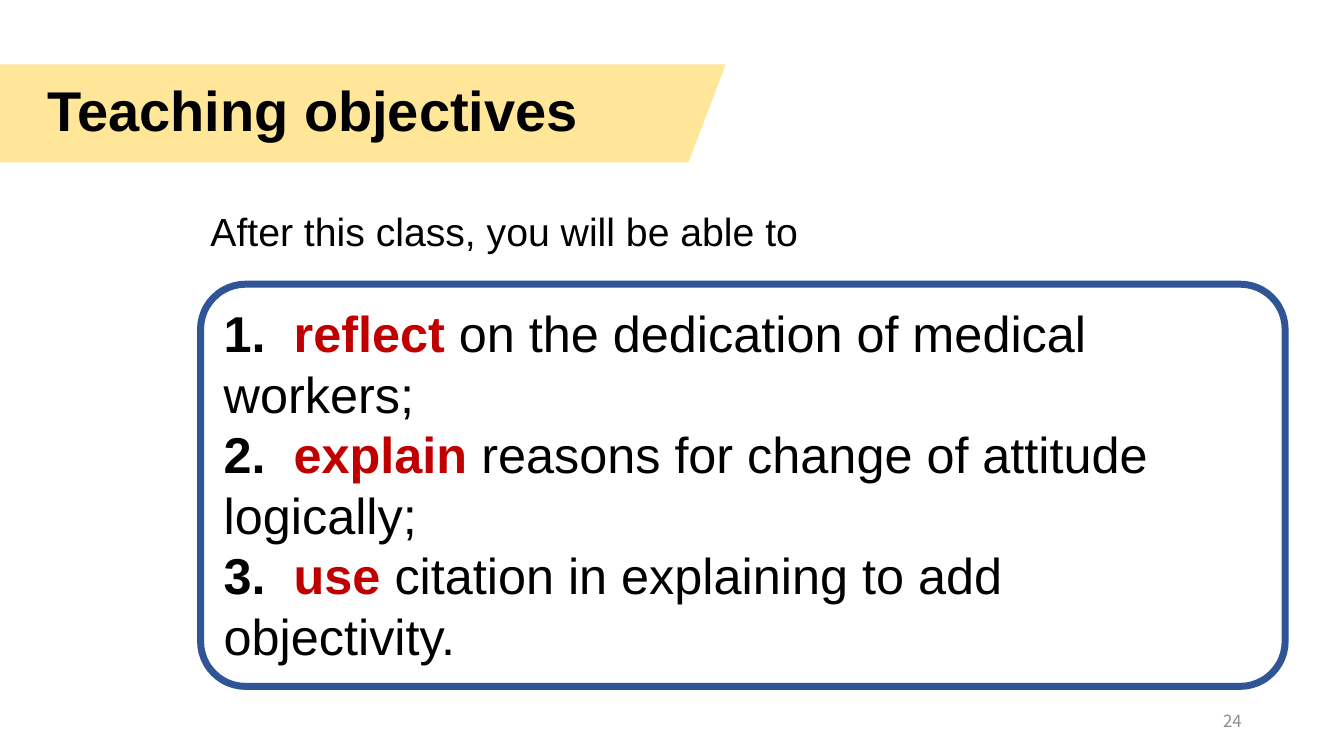
from lxml.etree import SubElement
from pptx import Presentation
from pptx.dml.color import RGBColor
from pptx.enum.shapes import MSO_SHAPE as Shape
from pptx.enum.text import MSO_ANCHOR as Anchor, PP_ALIGN as Align
from pptx.oxml.ns import qn
from pptx.util import Pt

COLORS = {"ink": "000000", "verb": "C00000", "banner": "FFE699",
          "frame": "2F5597", "paper": "FFFFFF", "number": "8C8C8C"}

OBJECTIVES = [
    ("reflect", "on the dedication of medical workers;"),
    ("explain", "reasons for change of attitude logically;"),
    ("use", "citation in explaining to add objectivity."),
]


def rgb(name):
    return RGBColor.from_string(COLORS[name])


def add_run(paragraph, text, size=36, color="ink", bold=False, font="Arial"):
    run = paragraph.add_run()
    run.text = text
    run.font.name = font
    run.font.size = Pt(size)
    run.font.bold = bold
    run.font.color.rgb = rgb(color)
    # East Asian typeface follows the Latin one
    SubElement(run.font._element, qn("a:ea")).set("typeface", font)


def add_text(slide, box, text, anchor=Anchor.TOP, align=Align.LEFT,
             spacing=None, **style):
    frame = slide.shapes.add_textbox(*map(Pt, box)).text_frame
    frame.word_wrap = True
    frame.vertical_anchor = anchor
    paragraph = frame.paragraphs[0]
    paragraph.alignment = align
    paragraph.line_spacing = spacing
    add_run(paragraph, text, **style)


def add_tab_stop(paragraph, position):
    stops = SubElement(paragraph._p.get_or_add_pPr(), qn("a:tabLst"))
    stop = SubElement(stops, qn("a:tab"))
    stop.set("pos", str(Pt(position)))
    stop.set("algn", "l")


def add_banner(slide, left, top, width, height):
    # Band with a slanted right end
    slant = 26.6
    outline = slide.shapes.build_freeform(Pt(left), Pt(top))
    outline.add_line_segments([
        (Pt(left + width), Pt(top)),
        (Pt(left + width - slant), Pt(top + height)),
        (Pt(left), Pt(top + height)),
    ], close=True)
    band = outline.convert_to_shape()
    band.shadow.inherit = False
    band.fill.solid()
    band.fill.fore_color.rgb = rgb("banner")
    band.line.fill.background()

    # Heading
    add_text(slide, (left + 26.6, top, width - 65, height),
             "Teaching objectives", anchor=Anchor.MIDDLE, spacing=0.9,
             size=40, bold=True)


def add_objectives(slide, left, top, width, height):
    # Lead-in above the frame
    add_text(slide, (left, top, 556.6, 41),
             "After this class, you will be able to", size=28)

    # Rounded frame
    lead_in = 58.3
    panel = slide.shapes.add_shape(
        Shape.ROUNDED_RECTANGLE, Pt(left), Pt(top + lead_in),
        Pt(width), Pt(height - lead_in))
    panel.adjustments[0] = 0.112
    panel.shadow.inherit = False
    panel.fill.solid()
    panel.fill.fore_color.rgb = rgb("paper")
    panel.line.color.rgb = rgb("frame")
    panel.line.width = Pt(5)

    # Numbered objectives
    frame = panel.text_frame
    frame.word_wrap = True
    frame.vertical_anchor = Anchor.TOP
    frame.margin_right = Pt(30)
    for number, (verb, rest) in enumerate(OBJECTIVES, 1):
        paragraph = frame.paragraphs[0] if number == 1 else frame.add_paragraph()
        paragraph.alignment = Align.LEFT
        add_tab_stop(paragraph, 50)
        add_run(paragraph, f"{number}.\t", bold=True)
        add_run(paragraph, f"{verb} ", color="verb", bold=True)
        add_run(paragraph, rest)


def add_slide_number(slide, left, top, width, height):
    add_text(slide, (left, top, width, height), "24", anchor=Anchor.MIDDLE,
             align=Align.RIGHT, size=12, color="number",
             font="Noto Sans CJK SC")


def main():
    deck = Presentation()
    deck.slide_width, deck.slide_height = Pt(960), Pt(540)
    slide = deck.slides.add_slide(deck.slide_layouts[6])
    add_banner(slide, 0, 46, 518.4, 70)
    add_objectives(slide, 143.3, 144.7, 774.7, 345.6)
    add_slide_number(slide, 678, 500.5, 216, 28.8)
    deck.save("out.pptx")


if __name__ == "__main__":
    main()
